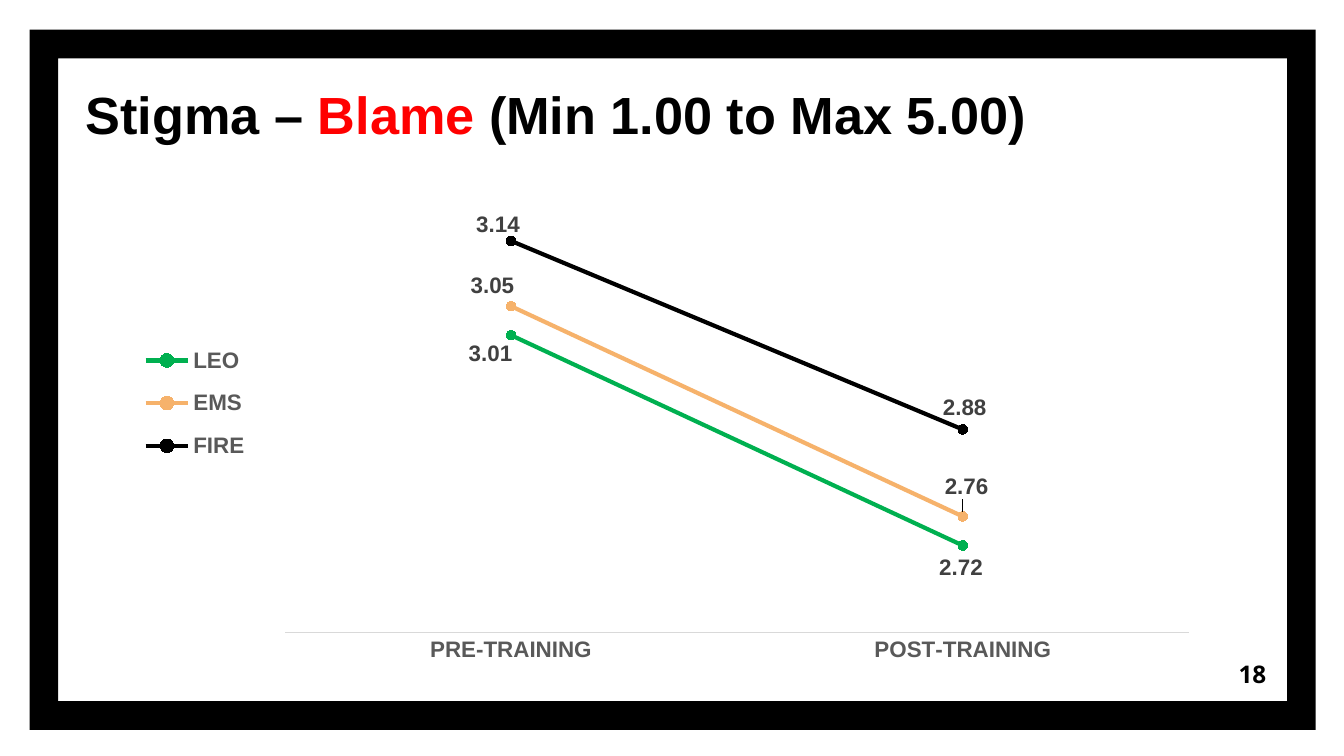
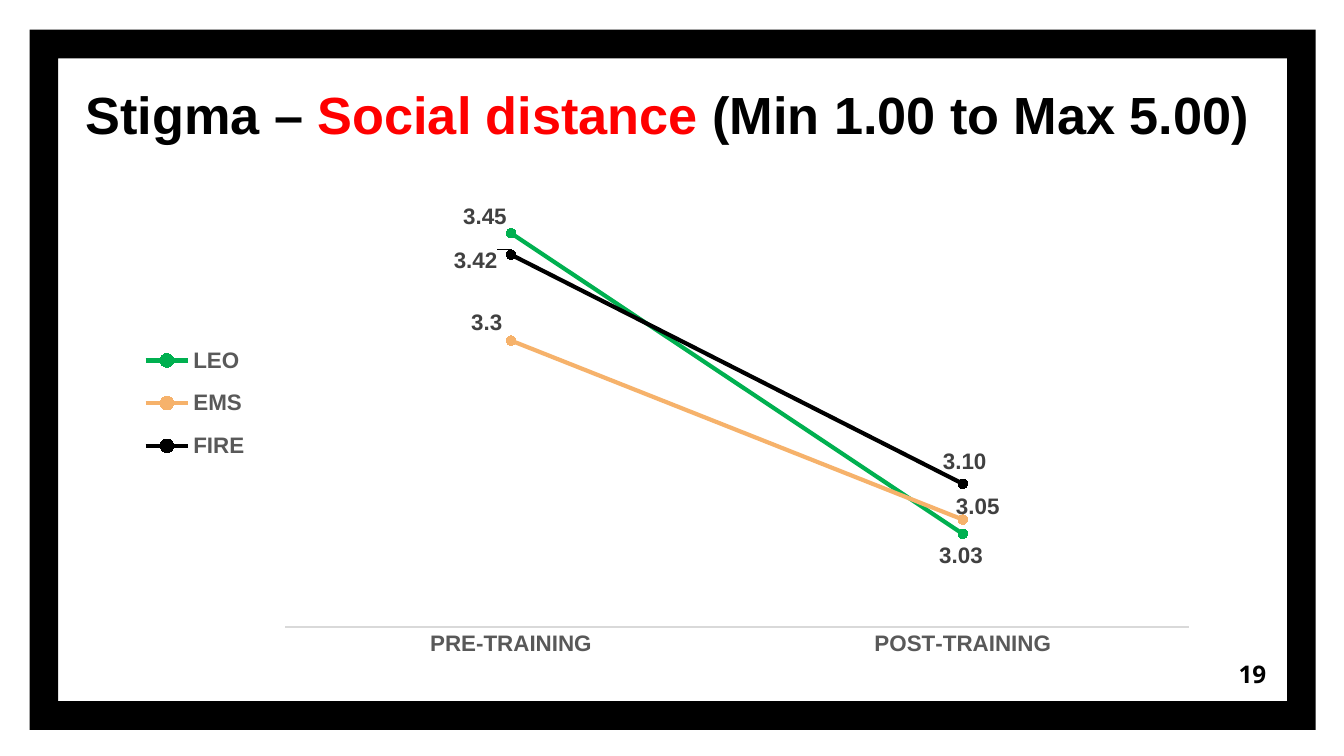
from dataclasses import dataclass
from lxml import etree
from pptx import Presentation
from pptx.chart.data import CategoryChartData
from pptx.dml.color import RGBColor
from pptx.enum.chart import (XL_CHART_TYPE, XL_LABEL_POSITION,
                             XL_LEGEND_POSITION, XL_MARKER_STYLE,
                             XL_TICK_MARK)
from pptx.enum.shapes import MSO_SHAPE
from pptx.enum.text import MSO_ANCHOR, PP_ALIGN
from pptx.oxml.ns import qn
from pptx.util import Pt


@dataclass(frozen=True)
class Theme:
    ink: str = "000000"
    red: str = "FF0000"
    gray: str = "595959"
    label: str = "404040"
    rule: str = "D9D9D9"
    face: str = "Arial"
    num_face: str = "Noto Sans"
    title: float = 28
    num: float = 13
    body: float = 12
    base: float = 10
    line: float = 2.25
    dot: int = 5


LOOK = Theme()

# Content: label spots are (side, x shift, y shift) in points
CATS = ["PRE-TRAINING", "POST-TRAINING"]
TEAMS = {"LEO": ("00B050", "General"),
         "EMS": ("F6B26B", "General"),
         "FIRE": ("000000", "0.00")}
UP, DOWN = XL_LABEL_POSITION.ABOVE, XL_LABEL_POSITION.BELOW
SLIDES = [
    {"topic": "Blame", "num": "18", "span": (2.6, 3.2), "tall": 0.859,
     "vals": {"LEO": (3.01, 2.72), "EMS": (3.05, 2.76), "FIRE": (3.14, 2.88)},
     "spots": [(DOWN, -11, -2), (DOWN, -1, 0), (UP, -10, 1),
               (UP, 2, -4), (UP, -7, 3), (UP, 1, 0)]},
    {"topic": "Social distance", "num": "19", "span": (2.9, 3.5),
     "tall": 0.848,
     "vals": {"LEO": (3.45, 3.03), "EMS": (3.3, 3.05), "FIRE": (3.42, 3.1)},
     "spots": [(UP, -14, 3), (DOWN, -1, 0), (UP, -13, 2),
               (UP, 8, 5), (UP, -19, 15), (UP, 1, 0)]},
]

# Places: left, top, width, height in points
PAGE = (720, 405)
FRAME = (15.84, 15.84, 689.04, 375.12)
TITLE = (38.88, -6.48, 651.6, 91.44)
NUM = (642.24, 345.6, 43.2, 30.96)
CHART = (63.36, 97.92, 588.24, 271.44)


def box(spot):
    return [Pt(v) for v in spot]


def style(font, size=LOOK.body, color=LOOK.gray, bold=True, face=LOOK.face):
    font.size, font.bold, font.name = Pt(size), bold, face
    font.color.rgb = RGBColor.from_string(color)


def write(slide, spot, runs, anchor=MSO_ANCHOR.MIDDLE, align=PP_ALIGN.LEFT,
          **form):
    """Add one line of text; runs are (text, color) pairs."""
    frame = slide.shapes.add_textbox(*box(spot)).text_frame
    frame.word_wrap, frame.vertical_anchor = True, anchor
    frame.margin_left = frame.margin_right = Pt(7.2)
    frame.margin_top = frame.margin_bottom = Pt(7.2)
    para = frame.paragraphs[0]
    para.alignment = align
    for text, color in runs:
        run = para.add_run()
        run.text = text
        style(run.font, color=color, **form)


def place(node, index, **parts):
    """Give a chart part a manual layout."""
    for old in node.findall(qn("c:layout")):
        node.remove(old)
    lay = etree.Element(qn("c:layout"))
    form = etree.SubElement(lay, qn("c:manualLayout"))
    for key, val in parts.items():
        etree.SubElement(form, qn(f"c:{key}")).set("val", str(val))
    node.insert(index, lay)


def paint(series, color):
    series.smooth = False
    series.format.line.width = Pt(LOOK.line)
    mark = series.marker
    mark.style, mark.size = XL_MARKER_STYLE.CIRCLE, LOOK.dot
    mark.format.fill.solid()
    rgb = RGBColor.from_string(color)
    mark.format.fill.fore_color.rgb = rgb
    for line in (series.format.line, mark.format.line):
        line.color.rgb = rgb


def plot(slide, item):
    data = CategoryChartData()
    data.categories = CATS
    for name, (_, form) in TEAMS.items():
        data.add_series(name, item["vals"][name], number_format=form)
    chart = slide.shapes.add_chart(
        XL_CHART_TYPE.LINE_MARKERS, *box(CHART), data).chart
    style(chart.font, size=LOOK.base, color=LOOK.ink, bold=False)
    chart.has_title = False
    chart.plots[0].vary_by_categories = False

    # Axes
    axis = chart.value_axis
    axis.minimum_scale, axis.maximum_scale = item["span"]
    axis.has_major_gridlines = axis.visible = False
    axis = chart.category_axis
    axis.major_tick_mark = axis.minor_tick_mark = XL_TICK_MARK.NONE
    axis.format.line.width = Pt(0.75)
    axis.format.line.color.rgb = RGBColor.from_string(LOOK.rule)
    style(axis.tick_labels.font)

    # Legend
    chart.has_legend = True
    chart.legend.position = XL_LEGEND_POSITION.LEFT
    chart.legend.include_in_layout = False
    style(chart.legend.font)

    # Lines and value labels
    spots = iter(item["spots"])
    for series, (color, _) in zip(chart.plots[0].series, TEAMS.values()):
        paint(series, color)
        series.data_labels.show_value = True
        style(series.data_labels.font, color=LOOK.label)
        for i in range(len(CATS)):
            label = series.points[i].data_label
            style(label.font, color=LOOK.label)
            label.position = next(spots)[0]

    # Manual layout of plot, legend and labels
    root = chart.element
    place(root.xpath("c:chart/c:plotArea")[0], 0, layoutTarget="inner",
          xMode="edge", yMode="edge", x=0.152, y=0.029, w=0.823,
          h=item["tall"])
    place(root.xpath("c:chart/c:legend")[0], 1, xMode="edge", yMode="edge",
          x=0.01, y=0.29, w=0.12, h=0.29)
    for node, (_, dx, dy) in zip(root.xpath(".//c:dLbl"), item["spots"]):
        place(node, 1, x=round(dx / CHART[2], 4), y=round(dy / CHART[3], 4))


def build(deck, item):
    slide = deck.slides.add_slide(deck.slide_layouts[6])
    # Border
    edge = slide.shapes.add_shape(MSO_SHAPE.FRAME, *box(FRAME))
    edge.adjustments[0] = 0.041
    edge.shadow.inherit = False
    edge.fill.solid()
    edge.fill.fore_color.rgb = RGBColor.from_string(LOOK.ink)
    edge.line.fill.background()
    # Title and page number
    write(slide, TITLE, [("Stigma – ", LOOK.ink),
                         (item["topic"] + " ", LOOK.red),
                         ("(Min 1.00 to Max 5.00)", LOOK.ink)],
          anchor=MSO_ANCHOR.BOTTOM, size=LOOK.title)
    write(slide, NUM, [(item["num"], LOOK.ink)], align=PP_ALIGN.RIGHT,
          size=LOOK.num, face=LOOK.num_face)
    plot(slide, item)


def main():
    deck = Presentation()
    deck.slide_width, deck.slide_height = box(PAGE)
    for item in SLIDES:
        build(deck, item)
    deck.save("out.pptx")


if __name__ == "__main__":
    main()
